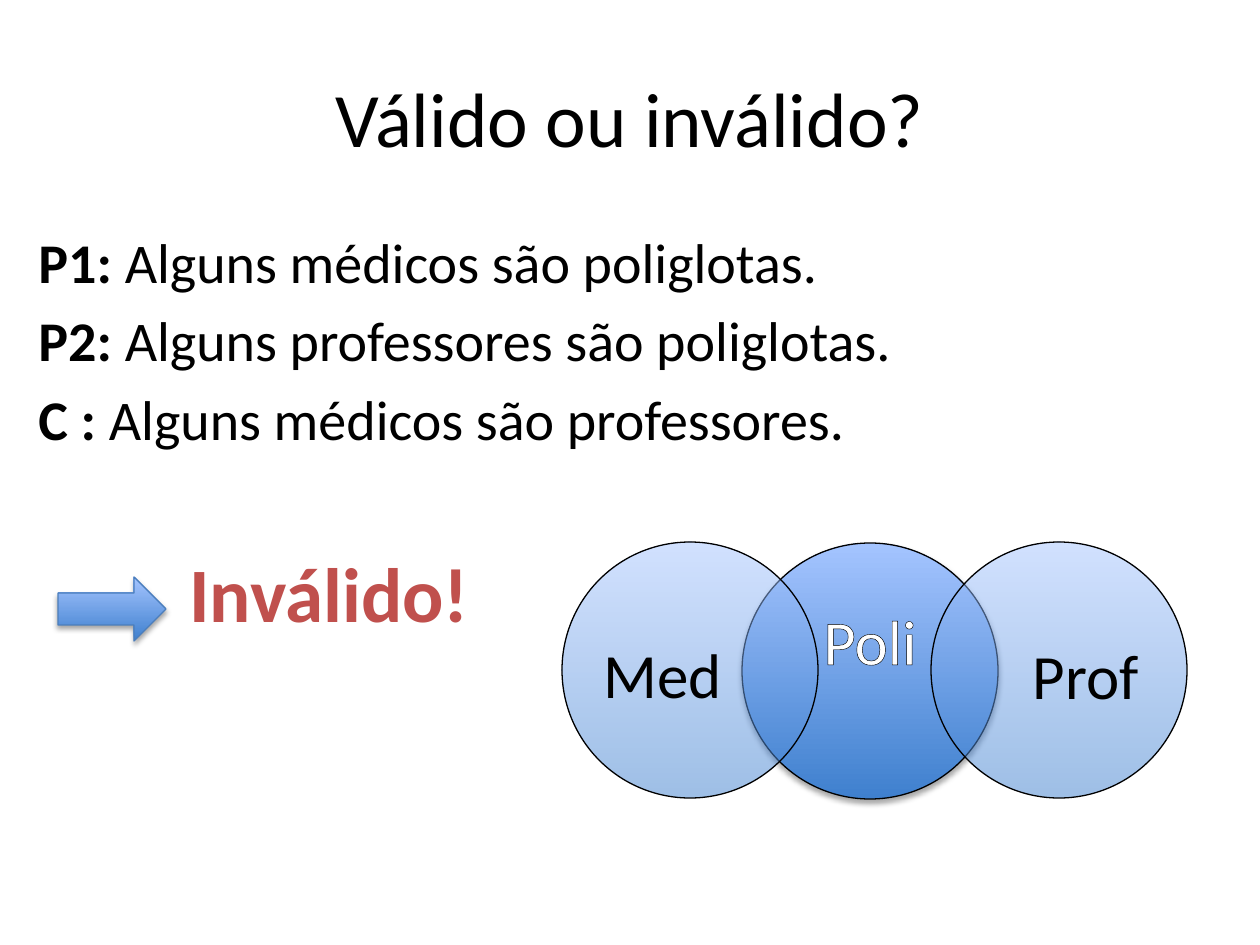
from dataclasses import dataclass

from lxml import etree
from pptx import Presentation
from pptx.dml.color import RGBColor
from pptx.enum.shapes import MSO_SHAPE
from pptx.enum.text import MSO_ANCHOR, PP_ALIGN
from pptx.oxml.ns import qn
from pptx.util import Emu, Pt

OVAL, ARROW = MSO_SHAPE.OVAL, MSO_SHAPE.RIGHT_ARROW
TOP, MIDDLE = MSO_ANCHOR.TOP, MSO_ANCHOR.MIDDLE
LEFT, CENTER = PP_ALIGN.LEFT, PP_ALIGN.CENTER


@dataclass(frozen=True)
class Theme:
    font: str = "Calibri"
    text: str = "000000"
    light: str = "FFFFFF"
    verdict: str = "C0504D"
    grad_low: str = "3F80CE"
    grad_high: str = "A4C4FF"
    arrow_line: str = "4B7EBC"
    title: int = 44
    body: int = 32
    label: int = 36


THEME = Theme()


def px(n):
    return Emu(round(n * 914400 / 126))


def rgb(value):
    return RGBColor.from_string(value)


def sub(parent, tag, **attrs):
    return etree.SubElement(parent, qn(tag), {k: str(v) for k, v in attrs.items()})


def add_text(slide, box, anchor=TOP, inset=None):
    tf = slide.shapes.add_textbox(*map(px, box)).text_frame
    tf.word_wrap = True
    tf.vertical_anchor = anchor
    if inset is not None:
        tf.margin_left = tf.margin_right = tf.margin_top = tf.margin_bottom = px(inset)
    return tf


def style(p, size, color=THEME.text, bold=None, align=LEFT):
    p.alignment = align
    p.font.name, p.font.size, p.font.bold = THEME.font, Pt(size), bold
    p.font.color.rgb = rgb(color)


def outline(r, color, width):
    ln = etree.Element(qn("a:ln"), w=str(Pt(width)))
    sub(sub(ln, "a:solidFill"), "a:srgbClr", val=color)
    r.font._element.insert(0, ln)


def add_gradient_shape(slide, kind, box, line, alpha=None, shadow=False):
    s = slide.shapes.add_shape(kind, *map(px, box))
    s.fill.gradient()
    s.fill.gradient_angle = 90
    stops = zip(s.fill.gradient_stops, (THEME.grad_low, THEME.grad_high), (0, 1))
    for stop, color, position in stops:
        stop.color.rgb = rgb(color)
        stop.position = position
    if alpha:
        for clr in s._element.spPr.iter(qn("a:srgbClr")):
            sub(clr, "a:alpha", val=alpha * 1000)
    s.line.color.rgb = rgb(line)
    s.line.width = Pt(0.75)
    s.shadow.inherit = False
    if shadow:
        effects = s._element.spPr.find(qn("a:effectLst"))
        shade = sub(effects, "a:outerShdw", blurRad=Pt(3.1), dist=Pt(1.8),
                    dir=5400000, rotWithShape=0)
        sub(sub(shade, "a:srgbClr", val=THEME.text), "a:alpha", val=35000)


def add_title(slide, box, text):
    p = add_text(slide, box, MIDDLE).paragraphs[0]
    p.text = text
    style(p, THEME.title, align=CENTER)


def add_argument(slide, box, lines, verdict):
    tf = add_text(slide, box)
    for i, (name, claim) in enumerate(lines):
        p = tf.paragraphs[0] if i == 0 else tf.add_paragraph()
        if i:
            p.space_before = Pt(6.4)
        style(p, THEME.body)
        r = p.add_run()
        r.text, r.font.bold = name + " ", True
        p.add_run().text = claim
    p = tf.add_paragraph()
    p.space_before = Pt(54)
    p._p.get_or_add_pPr().set("marL", str(px(151)))
    style(p, THEME.title, THEME.verdict, True)
    r = p.add_run()
    r.text = verdict
    outline(r, THEME.text, 1)
    left, top = box[:2]
    add_gradient_shape(slide, ARROW, (left + 32, top + 356, 108, 64),
                       THEME.arrow_line, shadow=True)


def add_label(slide, box, text, color, outlined):
    p = add_text(slide, box, MIDDLE, 0).paragraphs[0]
    p.line_spacing = 0.9
    style(p, THEME.label, color, align=CENTER)
    r = p.add_run()
    r.text = text
    if outlined:
        outline(r, THEME.text, 0.75)


def add_venn(slide, box):
    left, top, _, size = box
    sets = [
        ("Poli", 180, 1, None, (214, 45, 188, 115), THEME.light, True),
        ("Prof", 369, 0, 50, (447, 67, 154, 141), THEME.text, False),
        ("Med", 0, 0, 50, (24, 66, 154, 141), THEME.text, True),
    ]
    for name, dx, dy, alpha, (x, y, w, h), color, outlined in sets:
        add_gradient_shape(slide, OVAL, (left + dx, top + dy, size, size),
                           THEME.text, alpha, shadow=alpha is None)
        add_label(slide, (left + x, top + y, w, h), name, color, outlined)


def main():
    prs = Presentation()
    prs.slide_width, prs.slide_height = px(1260), px(945)
    slide = prs.slides.add_slide(prs.slide_layouts[6])
    add_title(slide, (63, 38, 1134, 157), "Válido ou inválido?")
    add_argument(slide, (26, 221, 1171, 684), [
        ("P1:", "Alguns médicos são poliglotas."),
        ("P2:", "Alguns professores são poliglotas."),
        ("C :", "Alguns médicos são professores."),
    ], "Inválido!")
    add_venn(slide, (562, 542, 625, 256))
    prs.save("out.pptx")


if __name__ == "__main__":
    main()
